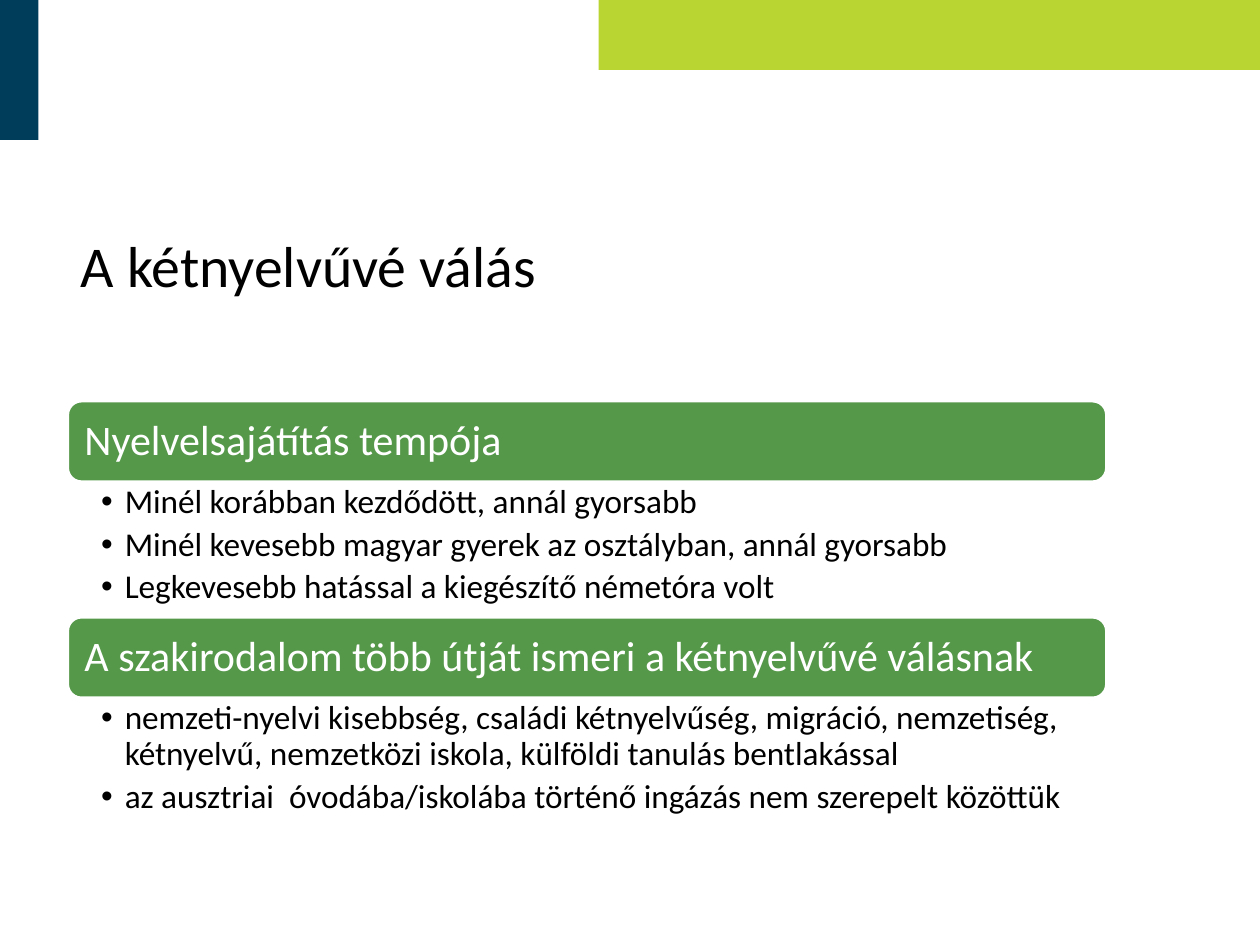
"""Build the slide on becoming bilingual."""
from lxml.etree import SubElement as Sub
from pptx import Presentation as Deck
from pptx.dml.color import RGBColor as Rgb
from pptx.enum.shapes import MSO_SHAPE as Kind
from pptx.enum.text import MSO_ANCHOR as Anchor, MSO_AUTO_SIZE as Fit, PP_ALIGN as Align
from pptx.oxml.ns import qn
from pptx.util import Pt

HUES = {"lime": "B9D531", "navy": "003D5B", "green": "55984A",
        "white": "FFFFFF", "black": "000000"}
LEFT, WIDE, BAR = 39, 593, 45.5
PARTS = [
    (229.5, 78, "Nyelvelsajátítás tempója", [
        "Minél korábban kezdődött, annál gyorsabb",
        "Minél kevesebb magyar gyerek az osztályban, annál gyorsabb",
        "Legkevesebb hatással a kiegészítő németóra volt"]),
    (353, 73, "A szakirodalom több útját ismeri a kétnyelvűvé válásnak", [
        "nemzeti-nyelvi kisebbség, családi kétnyelvűség, migráció, nemzetiség, "
        "kétnyelvű, nemzetközi iskola, külföldi tanulás bentlakással",
        "az ausztriai  óvodába/iskolába történő ingázás nem szerepelt közöttük"]),
]


def hue(name):
    return Rgb.from_string(HUES[name])


def place(item, x, y, w, h):
    item.left, item.top, item.width, item.height = Pt(x), Pt(y), Pt(w), Pt(h)


def frame(item, anchor, left, top, right):
    box = item.text_frame
    box.word_wrap, box.auto_size = True, Fit.NONE
    box.vertical_anchor = anchor
    box.margin_left, box.margin_right = Pt(left), Pt(right)
    box.margin_top = box.margin_bottom = Pt(top)
    return box


def write(para, text, size, color, after=0):
    para.alignment = Align.LEFT
    para.line_spacing = 0.9
    para.space_before, para.space_after = Pt(0), Pt(after)
    run = para.add_run()
    run.text = text
    run.font.name, run.font.size = "Calibri", Pt(size)
    run.font.color.rgb = hue(color)


def block(slide, kind, x, y, w, h, color):
    item = slide.shapes.add_shape(kind, Pt(x), Pt(y), Pt(w), Pt(h))
    item.shadow.inherit = False
    item.fill.solid()
    item.fill.fore_color.rgb = hue(color)
    item.line.fill.background()
    return item


def head(slide, text):
    item = slide.shapes.title
    place(item, LEFT, 101.5, WIDE, 104.5)
    box = frame(item, Anchor.MIDDLE, 7.2, 3.6, 7.2)
    write(box.paragraphs[0], text, 33, "black")


def bar(slide, y, text):
    item = block(slide, Kind.ROUNDED_RECTANGLE, LEFT, y, WIDE, BAR, "green")
    item.line.color.rgb = hue("white")
    item.line.width = Pt(1)
    box = frame(item, Anchor.MIDDLE, 7.2, 7.2, 7.2)
    write(box.paragraphs[0], text, 24, "white")


def points(item, y, h, lines):
    place(item, LEFT, y, WIDE, h)
    box = frame(item, Anchor.TOP, 18.8, 2.2, 13.7)
    for i, line in enumerate(lines):
        para = box.add_paragraph() if i else box.paragraphs[0]
        para.level = 1
        props = para._p.get_or_add_pPr()
        props.set("marL", str(Pt(13.5)))
        props.set("indent", str(-Pt(13.5)))
        Sub(props, qn("a:buChar"), char="•")
        write(para, line, 19, "black", 3.8)


def main():
    deck = Deck()
    deck.slide_width, deck.slide_height = Pt(720), Pt(540)
    slide = deck.slides.add_slide(deck.slide_layouts[3])
    block(slide, Kind.RECTANGLE, 342, 0, 378, 40, "lime")
    block(slide, Kind.RECTANGLE, -0.5, 0, 22.5, 80, "navy")
    head(slide, "A kétnyelvűvé válás")
    for slot, (y, h, text, lines) in enumerate(PARTS, 1):
        bar(slide, y, text)
        points(slide.placeholders[slot], y + BAR, h, lines)
    deck.save("out.pptx")


if __name__ == "__main__":
    main()
